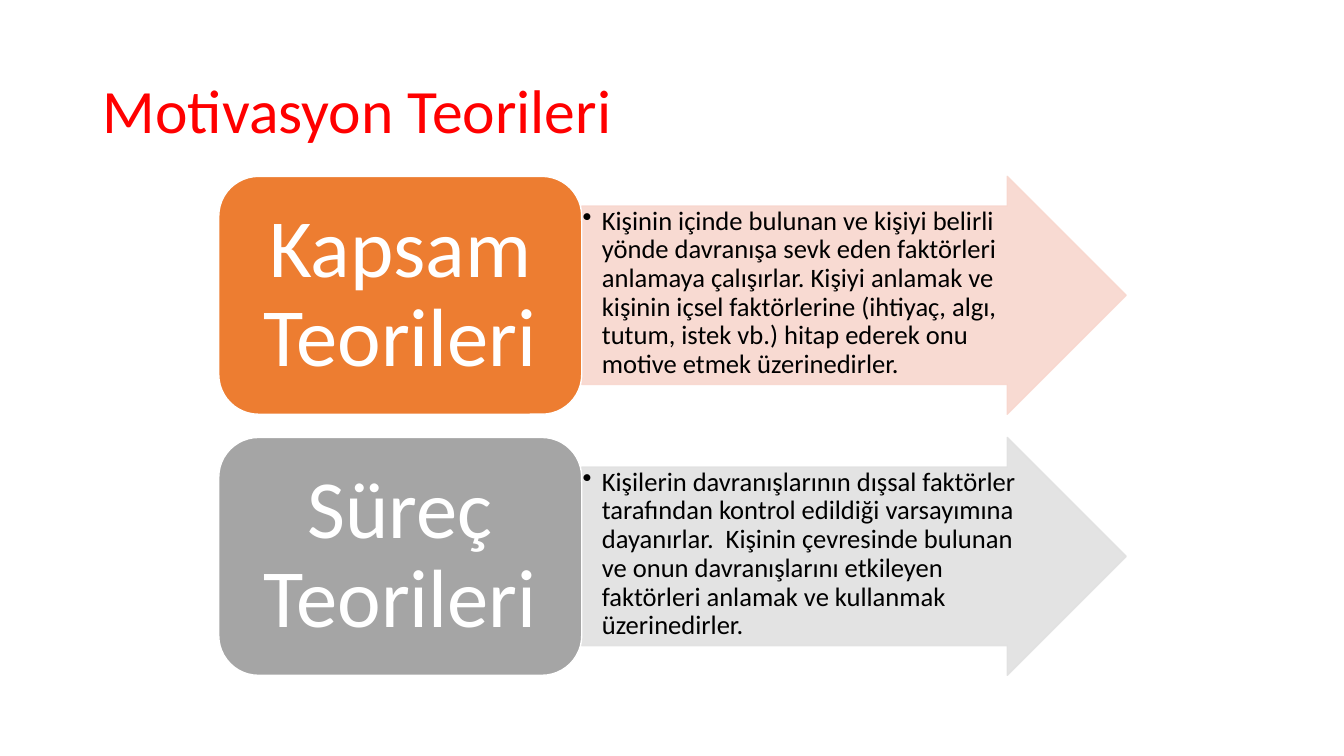
from lxml.etree import SubElement
from pptx import Presentation
from pptx.dml.color import RGBColor
from pptx.enum.shapes import MSO_SHAPE
from pptx.enum.text import MSO_ANCHOR, MSO_AUTO_SIZE, PP_ALIGN
from pptx.oxml.ns import qn
from pptx.util import Inches, Pt

RED = RGBColor(0xFF, 0x00, 0x00)
WHITE = RGBColor(0xFF, 0xFF, 0xFF)
BLACK = RGBColor(0x00, 0x00, 0x00)
ORANGE = RGBColor(0xED, 0x7D, 0x31)
PALE_ORANGE = RGBColor(0xF8, 0xD7, 0xCE)
GRAY = RGBColor(0xA5, 0xA5, 0xA5)
PALE_GRAY = RGBColor(0xE1, 0xE1, 0xE1)

FONT = "Calibri"
LABEL_SHARE = 0.4  # part of a row's width taken by its label

THEORIES = [
    ("Kapsam Teorileri", ORANGE, PALE_ORANGE,
     "Kişinin içinde bulunan ve kişiyi belirli yönde davranışa sevk eden "
     "faktörleri anlamaya çalışırlar. Kişiyi anlamak ve kişinin içsel "
     "faktörlerine (ihtiyaç, algı, tutum, istek vb.) hitap ederek onu "
     "motive etmek üzerinedirler."),
    ("Süreç Teorileri", GRAY, PALE_GRAY,
     "Kişilerin davranışlarının dışsal faktörler tarafından kontrol edildiği "
     "varsayımına dayanırlar.  Kişinin çevresinde bulunan ve onun "
     "davranışlarını etkileyen faktörleri anlamak ve kullanmak "
     "üzerinedirler."),
]


def write(shape, text, size, color, align, anchor, margins):
    """Fill a shape with one formatted paragraph and return it."""
    frame = shape.text_frame
    frame.text = text
    frame.word_wrap = True
    frame.auto_size = MSO_AUTO_SIZE.NONE
    frame.vertical_anchor = anchor
    across, down = (Inches(margin) for margin in margins)
    frame.margin_left = frame.margin_right = across
    frame.margin_top = frame.margin_bottom = down
    para = frame.paragraphs[0]
    para.alignment = align
    para.line_spacing = 0.9
    font = para.runs[0].font
    font.name, font.size = FONT, Pt(size)
    font.color.rgb = color
    return para


def add_block(page, kind, left, top, width, height, fill, line):
    block = page.shapes.add_shape(
        kind, Inches(left), Inches(top), Inches(width), Inches(height))
    block.shadow.inherit = False
    block.fill.solid()
    block.fill.fore_color.rgb = fill
    block.line.color.rgb = line
    block.line.width = Pt(1)
    return block


def add_bullet(para):
    properties = para._p.get_or_add_pPr()
    properties.set("marL", str(Inches(0.19)))
    properties.set("indent", str(Inches(-0.19)))
    SubElement(properties, qn("a:buChar"), char="•")


def make_translucent(shape, percent):
    """Apply the opacity to both the fill and the outline."""
    for color in shape._element.spPr.iter(qn("a:srgbClr")):
        SubElement(color, qn("a:alpha"), val=str(percent * 1000))


def add_title(page, left, top, width, height):
    title = page.shapes.title
    title.left, title.top = Inches(left), Inches(top)
    title.width, title.height = Inches(width), Inches(height)
    write(title, "Motivasyon Teorileri", 44, RED, PP_ALIGN.LEFT,
          MSO_ANCHOR.MIDDLE, (0.1, 0.05))


def add_theory(page, theory, left, top, width, height):
    name, color, pale, description = theory
    label_width = width * LABEL_SHARE

    # Arrow with the description
    arrow = add_block(page, MSO_SHAPE.RIGHT_ARROW, left + label_width, top,
                      width - label_width, height, pale, pale)
    arrow.adjustments[0] = 0.75
    arrow.adjustments[1] = 0.5
    make_translucent(arrow, 90)
    add_bullet(write(arrow, description, 19, BLACK, PP_ALIGN.LEFT,
                     MSO_ANCHOR.TOP, (0.01, 0.01)))

    # Rounded label
    label = add_block(page, MSO_SHAPE.ROUNDED_RECTANGLE, left, top,
                      label_width, height, color, WHITE)
    write(label, name, 59, WHITE, PP_ALIGN.CENTER, MSO_ANCHOR.MIDDLE,
          (0.25, 0.12))


def add_theories(page, left, top, width, row_height, gap):
    for index, theory in enumerate(THEORIES):
        row_top = top + index * (row_height + gap)
        add_theory(page, theory, left, row_top, width, row_height)


def main():
    deck = Presentation()
    deck.slide_width, deck.slide_height = Inches(13.33), Inches(7.5)
    page = deck.slides.add_slide(deck.slide_layouts[5])
    add_title(page, 0.92, 0.4, 11.5, 1.45)
    add_theories(page, 2.17, 1.75, 9, 2.36, 0.23)
    deck.save("out.pptx")


if __name__ == "__main__":
    main()
